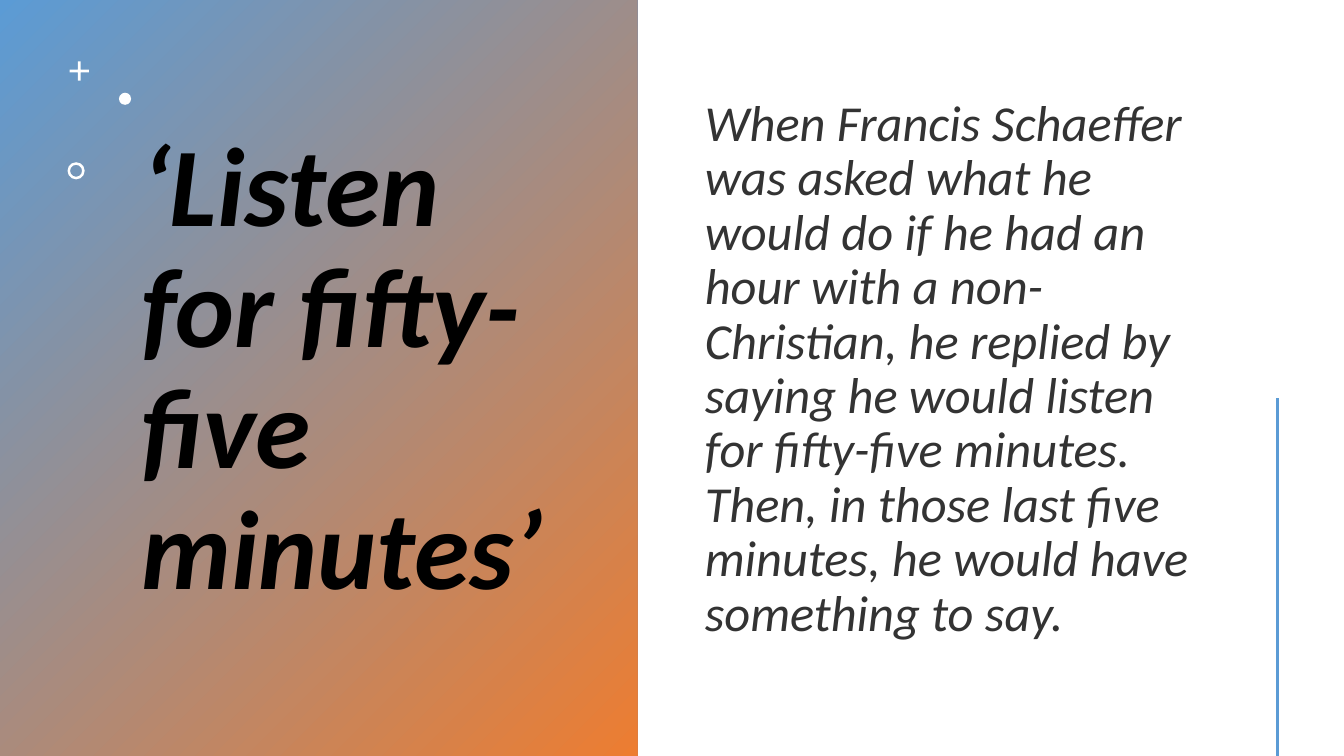
from lxml import etree
from pptx import Presentation
from pptx.dml.color import RGBColor
from pptx.enum.shapes import MSO_CONNECTOR, MSO_SHAPE
from pptx.enum.text import MSO_ANCHOR, MSO_AUTO_SIZE, PP_ALIGN
from pptx.oxml.ns import qn
from pptx.util import Inches, Pt

RECTANGLE, CROSS, OVAL, DONUT = (
    MSO_SHAPE.RECTANGLE, MSO_SHAPE.CROSS, MSO_SHAPE.OVAL, MSO_SHAPE.DONUT)
STRAIGHT = MSO_CONNECTOR.STRAIGHT
MIDDLE = MSO_ANCHOR.MIDDLE
NO_AUTOFIT = MSO_AUTO_SIZE.NONE
LEFT = PP_ALIGN.LEFT

BLUE, ORANGE, WHITE = "5B9BD5", "ED7D31", "FFFFFF"
BLACK, CHARCOAL = "000000", "333333"
FONT = "Calibri"
HEADING = "‘Listen for fifty-five minutes’"
STORY = (
    "When Francis Schaeffer was asked what he would do if he had an hour "
    "with a non-Christian, he replied by saying he would listen for "
    "fifty-five minutes. Then, in those last five minutes, he would have "
    "something to say."
)


def colour(hex_string):
    return RGBColor.from_string(hex_string)


def place(part, left, top, width, height):
    part.left, part.top = Inches(left), Inches(top)
    part.width, part.height = Inches(width), Inches(height)


def add_plain_shape(slide, kind, left, top, width, height):
    shape = slide.shapes.add_shape(
        kind, Inches(left), Inches(top), Inches(width), Inches(height))
    shape.shadow.inherit = False
    shape.line.fill.background()
    return shape


def fill_placeholder(placeholder, box, text, size, text_colour, bold=False):
    place(placeholder, *box)
    frame = placeholder.text_frame
    frame.text = text
    frame.word_wrap = True
    frame.auto_size = NO_AUTOFIT
    frame.vertical_anchor = MIDDLE
    paragraph = frame.paragraphs[0]
    paragraph.alignment = LEFT
    paragraph.line_spacing = 0.9
    paragraph.space_before = Pt(0)
    font = paragraph.runs[0].font
    font.name, font.size = FONT, Pt(size)
    font.bold, font.italic = bold, True
    font.color.rgb = colour(text_colour)
    return frame


def add_ornaments(slide, left, top):
    ornaments = [
        (CROSS, 0.02, 0, 0.19, 0.43),
        (OVAL, 0.51, 0.31, 0.12, None),
        (DONUT, 0, 1, 0.17, 0.15),
    ]
    for kind, across, down, size, adjustment in ornaments:
        ornament = add_plain_shape(
            slide, kind, left + across, top + down, size, size)
        ornament.fill.solid()
        ornament.fill.fore_color.rgb = colour(WHITE)
        if adjustment is not None:
            ornament.adjustments[0] = adjustment


def build_heading_panel(slide, left, top, width, height):
    panel = add_plain_shape(slide, RECTANGLE, left, top, width, height)
    panel.fill.gradient()
    panel.fill.gradient_angle = 315
    for stop, shade in zip(panel.fill.gradient_stops, (BLUE, ORANGE)):
        stop.color.rgb = colour(shade)
    slide.shapes._spTree.insert(2, panel._element)
    heading_box = (left + 1.3, top + 0.42, width - 1.94, height - 0.97)
    fill_placeholder(slide.shapes.title, heading_box, HEADING, 80, BLACK, True)
    add_ornaments(slide, left + 0.67, top + 0.61)


def build_story_panel(slide, left, top, width, height):
    story_box = (left + 0.57, top + 0.57, width - 1.79, height - 1.12)
    frame = fill_placeholder(
        slide.placeholders[1], story_box, STORY, 36, CHARCOAL)
    frame.margin_bottom = Inches(0.23)
    properties = frame.paragraphs[0]._p.get_or_add_pPr()
    properties.set("marL", "0")
    properties.set("indent", "0")
    etree.SubElement(properties, qn("a:buNone"))

    accent_x = Inches(left + width - 0.66)
    accent = slide.shapes.add_connector(
        STRAIGHT, accent_x, Inches(top + 3.95), accent_x, Inches(top + height))
    accent.line.color.rgb = colour(BLUE)
    accent.line.width = Pt(2)
    etree.SubElement(accent._element.spPr, qn("a:effectLst"))


def main():
    deck = Presentation()
    deck.slide_width, deck.slide_height = Inches(13.33), Inches(7.5)
    slide = deck.slides.add_slide(deck.slide_layouts[1])
    build_heading_panel(slide, 0, 0, 6.32, 7.5)
    build_story_panel(slide, 6.32, 0, 7.01, 7.5)
    deck.save("out.pptx")


if __name__ == "__main__":
    main()
